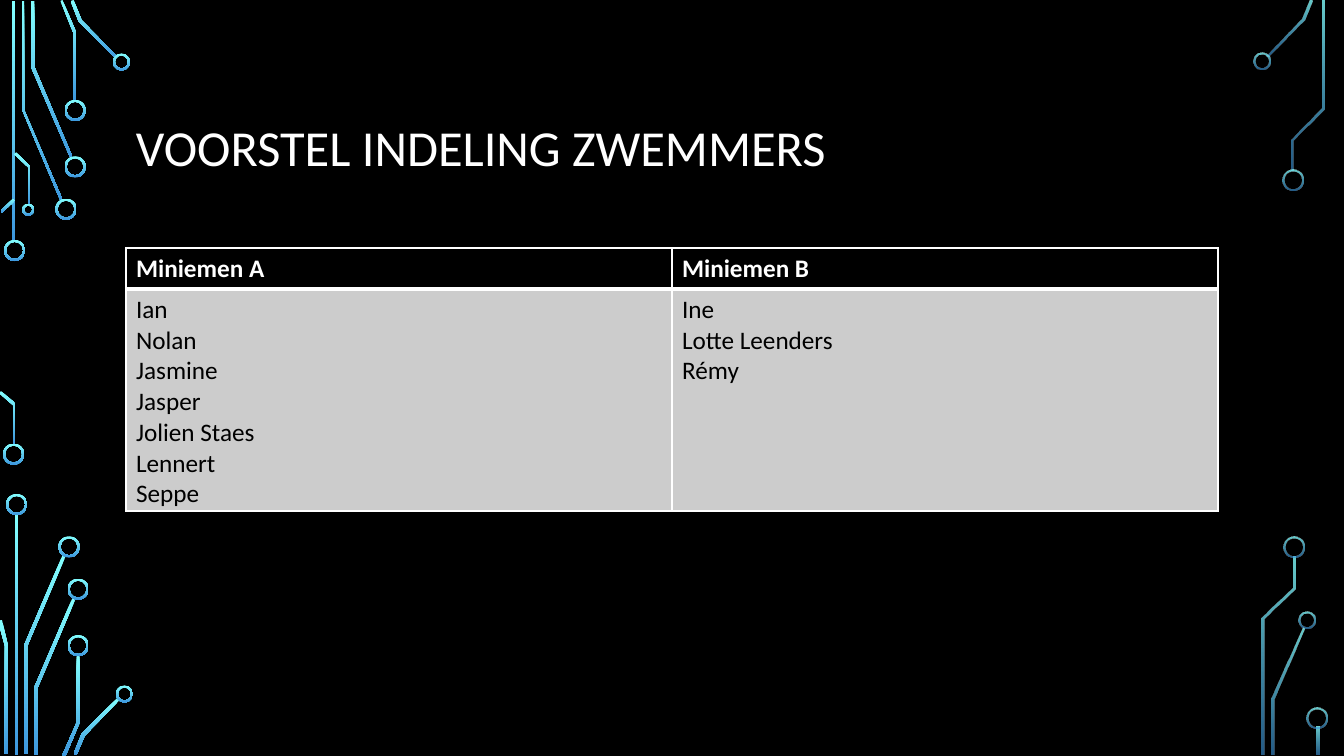
"""Build the swimmers slide with a two-column team table framed by circuit traces."""
from dataclasses import dataclass

from lxml import etree
from pptx import Presentation
from pptx import util as u
from pptx.dml.color import RGBColor
from pptx.enum import shapes, text
from pptx.oxml.ns import qn

PX = 9144


@dataclass(frozen=True)
class Theme:
    """Colours, font and type sizes of the slide."""
    black: str = "000000"
    white: str = "FFFFFF"
    grey: str = "CCCCCC"
    glow: tuple = ("82FFFF", "3D97DE")
    solid: tuple = (100, 100)
    dimmed: tuple = (80, 60)
    font: str = "Calibri"
    title_size: int = 36
    body_size: int = 18


THEME = Theme()

TEAMS = {
    "Miniemen A": ["Ian", "Nolan", "Jasmine", "Jasper", "Jolien Staes", "Lennert", "Seppe"],
    "Miniemen B": ["Ine", "Lotte Leenders", "Rémy"],
}

LEFT_BARS = [(12, 1, 3, 239), (15, 510, 3, 239)]
RIGHT_BARS = [(1306, 721, 3, 28)]

LEFT_RINGS = [
    (4, 238, 21), (3, 440, 21), (55, 197, 21), (64, 155, 21), (64, 99, 21),
    (112, 53, 17), (22, 202, 12), (6, 490, 21), (58, 532, 21), (67, 574, 21),
    (67, 630, 21), (115, 680, 17),
]
RIGHT_RINGS = [(1243, 52, 17), (1272, 168, 21), (1288, 607, 17), (1273, 532, 21), (1296, 702, 21)]

LEFT_TRACES = [
    [(60, 199), (22, 109), (22, 1), (24, 1), (24, 109), (62, 198)],
    [(70, 157), (31, 67), (31, 1), (34, 1), (34, 66), (72, 156)],
    [(76, 100), (73, 100), (73, 33), (60, 1), (62, 0), (76, 33)],
    [(115, 58), (78, 21), (70, 1), (73, 0), (81, 20), (116, 56)],
    [(2, 211), (1, 209), (13, 197), (15, 199)],
    [(15, 441), (13, 441), (13, 402), (-1, 390), (1, 388), (15, 400)],
    [(30, 203), (28, 203), (28, 166), (14, 153), (16, 151), (30, 165)],
    [(27, 748), (24, 748), (24, 640), (62, 551), (65, 552), (27, 641)],
    [(8, 748), (5, 748), (5, 641), (-2, 616), (2, 615), (8, 641)],
    [(37, 749), (34, 749), (34, 682), (72, 593), (75, 594), (37, 683)],
    [(65, 750), (62, 749), (76, 717), (76, 650), (79, 650), (79, 717)],
    [(76, 749), (73, 748), (81, 728), (117, 692), (119, 694), (84, 730)],
]
RIGHT_TRACES = [
    [(1258, 56), (1256, 55), (1291, 19), (1299, 0), (1302, 1), (1294, 20)],
    [(1264, 749), (1261, 749), (1261, 693), (1292, 623), (1294, 624), (1264, 694)],
    [(1283, 169), (1281, 169), (1281, 138), (1311, 107), (1311, 1), (1314, 1),
     (1314, 108), (1283, 139)],
    [(1254, 749), (1251, 749), (1251, 613), (1282, 583), (1282, 552), (1285, 552),
     (1285, 584), (1254, 614)],
]


def emu(*lengths):
    """Turn px lengths into EMU."""
    return [u.Emu(length * PX) for length in lengths]


def apply(target, values):
    """Set every attribute named in a dict of format values."""
    for name, value in values.items():
        setattr(target, name, value)


def style_text(paragraph, size, color, bold=False):
    """Format the font of a paragraph."""
    apply(paragraph.font, {"name": THEME.font, "size": u.Pt(size), "bold": bold})
    paragraph.font.color.rgb = RGBColor.from_string(color)


def glow(shape, opacities):
    """Fill a shape with the vertical glow gradient."""
    shape.shadow.inherit = False
    shape.line.fill.background()
    shape.fill.gradient()
    shape.fill.gradient_angle = 270
    for stop, color in zip(shape.fill.gradient_stops, THEME.glow):
        stop.color.rgb = RGBColor.from_string(color)
    colors = shape._element.spPr.iter(qn("a:srgbClr"))
    for color, opacity in zip(list(colors), opacities):
        if opacity < 100:
            etree.SubElement(color, qn("a:alpha"), val=str(opacity * 1000))


def add_bar(slide, box, opacities):
    """Add a straight vertical trace."""
    glow(slide.shapes.add_shape(shapes.MSO_SHAPE.RECTANGLE, *emu(*box)), opacities)


def add_ring(slide, ring, opacities):
    """Add a circuit node with a rim of two px."""
    left, top, size = ring
    shape = slide.shapes.add_shape(shapes.MSO_SHAPE.DONUT, *emu(left, top, size, size))
    shape.adjustments[0] = 2 / size
    glow(shape, opacities)


def add_trace(slide, points, opacities):
    """Add a bent trace from its outline."""
    builder = slide.shapes.build_freeform(*points[0], scale=PX)
    builder.add_line_segments(points[1:], close=True)
    glow(builder.convert_to_shape(), opacities)


def add_circuit(slide, bars, rings, traces, opacities):
    """Add all the circuit parts of one side."""
    for add, parts in ((add_bar, bars), (add_trace, traces), (add_ring, rings)):
        for part in parts:
            add(slide, part, opacities)


def add_title(slide, title):
    """Add the slide title."""
    frame = slide.shapes.add_textbox(*emu(125, 68, 1083, 162)).text_frame
    apply(frame, {"word_wrap": True, "vertical_anchor": text.MSO_ANCHOR.MIDDLE, "text": title})
    paragraph = frame.paragraphs[0]
    paragraph.line_spacing = 0.9
    style_text(paragraph, THEME.title_size, THEME.white)


def set_borders(cell, widths):
    """Draw the white cell borders, widths in points by side."""
    properties = cell._tc.get_or_add_tcPr()
    for index, (side, width) in enumerate(widths.items()):
        line = etree.Element(qn(f"a:ln{side}"), w=str(u.Pt(width)))
        fill = etree.SubElement(line, qn("a:solidFill"))
        etree.SubElement(fill, qn("a:srgbClr"), val=THEME.white)
        properties.insert(index, line)


def fill_cell(cell, lines, fill, color, bold, widths):
    """Write the lines of a cell and format it."""
    cell.text = "\n".join(lines)
    cell.fill.solid()
    cell.fill.fore_color.rgb = RGBColor.from_string(fill)
    for paragraph in cell.text_frame.paragraphs:
        style_text(paragraph, THEME.body_size, color, bold)
    set_borders(cell, widths)


def add_team_table(slide, teams):
    """Add the table with one column per team."""
    frame = slide.shapes.add_table(2, len(teams), *emu(125, 246, 1083, 261))
    table = frame.table
    for row, height in zip(table.rows, emu(41, 220)):
        row.height = height
    header_borders = {"L": 1, "R": 1, "T": 1, "B": 3}
    body_borders = {"L": 1, "R": 1, "T": 3, "B": 1}
    for column, (team, swimmers) in enumerate(teams.items()):
        fill_cell(table.cell(0, column), [team], THEME.black, THEME.white, True, header_borders)
        fill_cell(table.cell(1, column), swimmers, THEME.grey, THEME.black, False, body_borders)


def main():
    """Build and save the presentation."""
    presentation = Presentation()
    width, height = emu(1333, 750)
    apply(presentation, {"slide_width": width, "slide_height": height})
    slide = presentation.slides.add_slide(presentation.slide_layouts[6])
    slide.background.fill.solid()
    slide.background.fill.fore_color.rgb = RGBColor.from_string(THEME.black)
    add_circuit(slide, LEFT_BARS, LEFT_RINGS, LEFT_TRACES, THEME.solid)
    add_circuit(slide, RIGHT_BARS, RIGHT_RINGS, RIGHT_TRACES, THEME.dimmed)
    add_title(slide, "VOORSTEL INDELING ZWEMMERS")
    add_team_table(slide, TEAMS)
    presentation.save("out.pptx")


if __name__ == "__main__":
    main()
